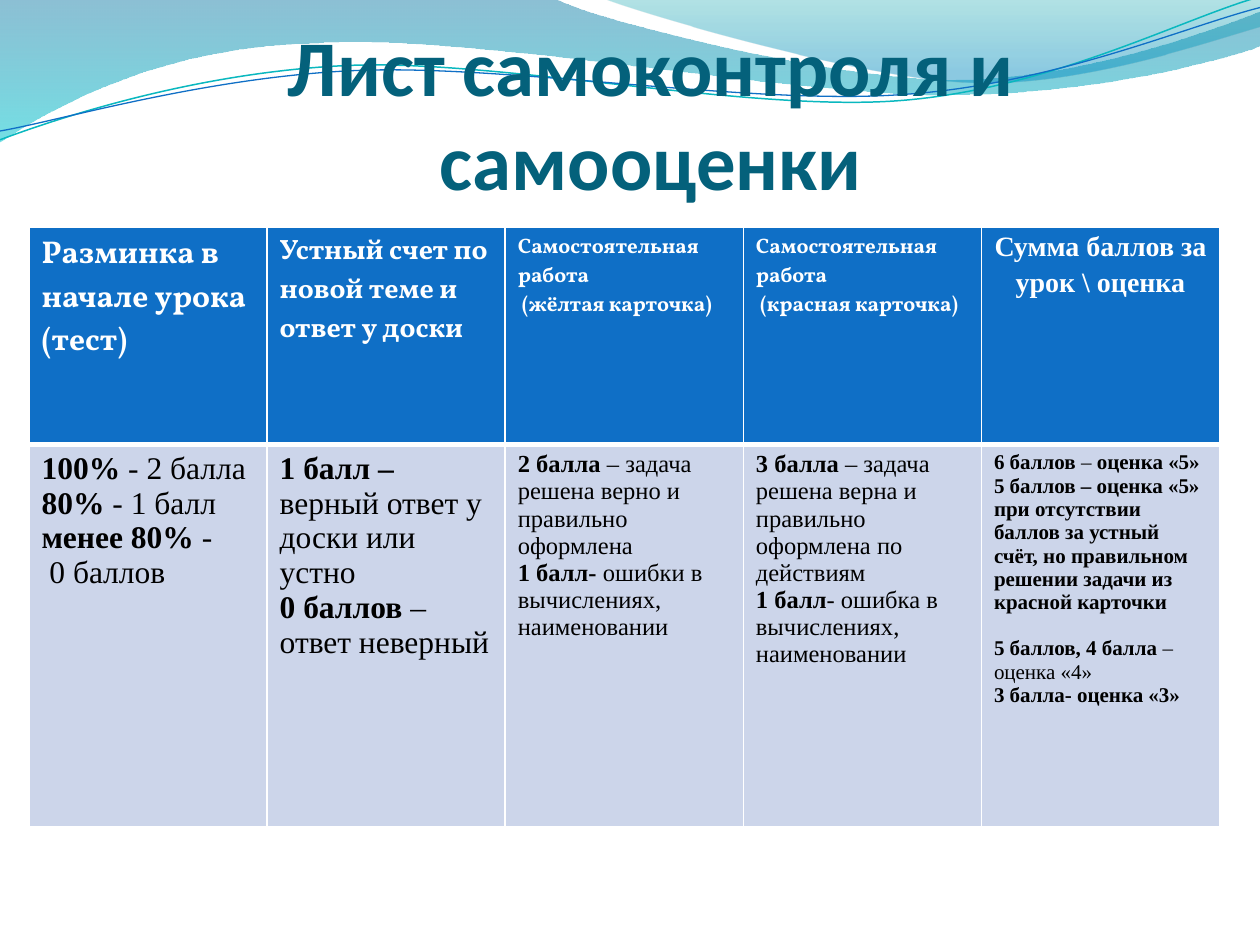
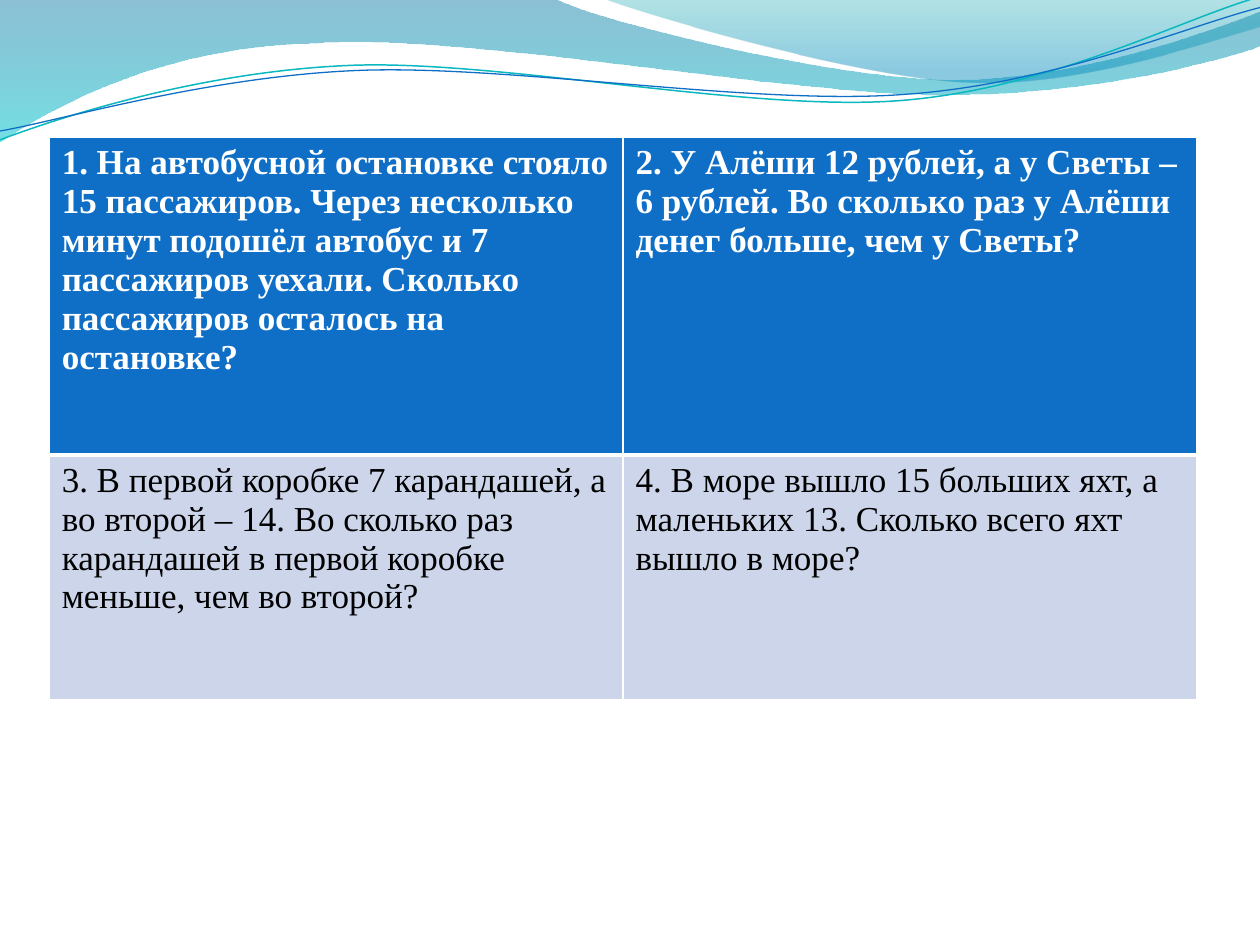
"""Build two maths-lesson slides: a self-assessment sheet and a set of problems."""
from lxml.etree import SubElement
from pptx import Presentation
from pptx.dml.color import RGBColor
from pptx.enum.text import MSO_ANCHOR, MSO_AUTO_SIZE, PP_ALIGN
from pptx.oxml.ns import qn
from pptx.util import Pt

EMU_PER_PX = 9144
TITLE_ONLY, BLANK = 5, 6
COLORS = {
    "white": "FFFFFF", "black": "000000", "title": "04617B",
    "header": "0F6FC6", "body": "CCD5EA", "line_teal": "0AB8BF",
    "left_top": "0074A1", "left_bottom": "00C6CF",
    "right_top": "00A1A9", "right_bottom": "008BBF",
}
SERIF, TITLE_FONT, HEADER_FONT = "Times New Roman", "Calibri", "Vollkorn"

LEFT_WAVE = [(0, 0), (440, -1), (476, 17, 664, 63, 758, 63),
             (853, 63, 958, 26, 1000, 9), (1001, 36),
             (983, 44, 870, 76, 746, 75), (622, 75, 382, 28, 257, 34),
             (129, 36, 46, 83, -1, 113), (0, 0)]
RIGHT_WAVE = [(479, -1), (509, 11, 682, 62, 769, 65),
              (856, 69, 961, 32, 1000, 21), (1000, 0), (479, -1)]
TEAL_LINE = [(0, 111), (48, 93, 158, 57, 277, 52),
             (395, 47, 593, 89, 713, 80), (833, 71, 938, 15, 998, -2)]
BLUE_LINE = [(0, 104), (47, 96, 164, 61, 283, 56),
             (403, 51, 597, 84, 717, 75), (836, 67, 941, 21, 1000, 6)]

ASSESSMENT_HEADER = [
    (["Разминка в начале урока (тест)"], 18),
    (["Устный счет по новой теме и ответ у доски"], 16),
    (["Самостоятельная работа", " (жёлтая карточка)"], 12),
    (["Самостоятельная работа", " (красная карточка)"], 12),
    (["Сумма баллов за урок \\ оценка"], 16),
]
ASSESSMENT_BODY = [
    (["**100% **- 2 балла", "**80% **- 1 балл", "**менее 80% **-", " 0 баллов"], 18),
    (["**1 балл – **верный ответ у доски или устно",
      "**0 баллов **– ответ неверный"], 18),
    (["**2 балла **– задача решена верно и правильно оформлена",
      "**1 балл- **ошибки в вычислениях, наименовании"], 14),
    (["**3 балла **– задача решена верна и правильно оформлена по действиям",
      "**1 балл**- ошибка в вычислениях, наименовании"], 14),
    (["**6 баллов **– **оценка «5»**",
      "**5 баллов – оценка «5» при отсутствии баллов за устный счёт, "
      "но правильном решении задачи из красной карточки**",
      "**5 баллов, 4 балла **– оценка «4»", "**3 балла- оценка «3»**"], 12),
]
PROBLEMS = [
    [(["1. На автобусной остановке стояло 15 пассажиров. Через несколько минут "
       "подошёл автобус и 7 пассажиров уехали. Сколько пассажиров осталось на "
       "остановке?"], 20),
     (["2. У Алёши 12 рублей, а у Светы – 6 рублей. Во сколько раз у Алёши "
       "денег больше, чем у Светы?"], 20)],
    [(["3. В первой коробке 7 карандашей, а во второй – 14. Во сколько раз "
       "карандашей в первой коробке меньше, чем во второй?"], 20),
     (["4. В море вышло 15 больших яхт, а маленьких 13. Сколько всего яхт "
       "вышло в море?"], 20)],
]


def px(length):
    """Turn px into EMU."""
    return round(length * EMU_PER_PX)


def color(name):
    """Return a named colour."""
    return RGBColor.from_string(COLORS[name])


class LessonDeck:
    """Hold the shared style and the current slide."""

    def __init__(self):
        """Start an empty deck."""
        self.deck = Presentation()
        self.deck.slide_width, self.deck.slide_height = px(1000), px(750)
        self.page = None

    def add_page(self, layout):
        """Add a slide."""
        self.page = self.deck.slides.add_slide(self.deck.slide_layouts[layout])

    def decorate_master(self):
        """Draw the waves and move them behind everything on the master."""
        waves = [
            self.wave(LEFT_WAVE, [(0, "left_top", 45), (1, "left_bottom", 55)]),
            self.wave(RIGHT_WAVE, [(0, "right_top", 30), (0.8, "right_bottom", 45)]),
            self.wave_line(TEAL_LINE, "line_teal", 0.85),
            self.wave_line(BLUE_LINE, "header", 0.75),
        ]
        tree = self.deck.slide_master.shapes._spTree
        for number, shape in enumerate(waves):
            shape._element.nvSpPr.cNvPr.set("id", str(100 + number))
            tree.insert(2 + number, shape._element)

    def outline(self, outline, close):
        """Draw a freeform of lines and cubic curves."""
        points = [(px(x), px(y)) for segment in outline
                  for x, y in zip(segment[::2], segment[1::2])]
        builder = self.page.shapes.build_freeform(*points[0])
        builder.add_line_segments(points[1:], close=close)
        shape = builder.convert_to_shape()
        shape.shadow.inherit = False
        lines = list(shape._element.iter(qn("a:lnTo")))
        for segment in outline[1:]:
            group = [lines.pop(0) for _ in segment[::2]]
            if len(group) == 3:
                group[0].tag = qn("a:cubicBezTo")
                for line in group[1:]:
                    group[0].append(line[0])
                    line.getparent().remove(line)
        return shape

    def wave(self, outline, stops):
        """Draw a wave with a vertical transparent gradient."""
        shape = self.outline(outline, True)
        shape.line.fill.background()
        shape.fill.gradient()
        shape.fill.gradient_angle = 270
        for stop, (position, name, _) in zip(shape.fill.gradient_stops, stops):
            stop.position = position
            stop.color.rgb = color(name)
        tones = shape._element.spPr.iter(qn("a:srgbClr"))
        for tone, (_, _, opacity) in zip(tones, stops):
            SubElement(tone, qn("a:alpha"), val=str(opacity * 1000))
        return shape

    def wave_line(self, outline, name, width):
        """Draw a thin wavy line."""
        shape = self.outline(outline, False)
        shape.fill.background()
        shape.line.color.rgb = color(name)
        shape.line.width = Pt(width)
        return shape

    def style_span(self, span, size, font, name, bold):
        """Format one run."""
        span.font.size, span.font.name, span.font.bold = Pt(size), font, bold
        span.font.color.rgb = color(name)

    def title(self, text, left, top, width, height):
        """Place and format the slide title."""
        box = self.page.shapes.title
        box.left, box.top, box.width, box.height = map(px, (left, top, width, height))
        frame = box.text_frame
        frame.text = text
        frame.word_wrap = True
        frame.auto_size = MSO_AUTO_SIZE.NONE
        frame.vertical_anchor = MSO_ANCHOR.BOTTOM
        frame.margin_left = frame.margin_right = frame.margin_bottom = 0
        frame.margin_top = px(5)
        para = frame.paragraphs[0]
        para.alignment = PP_ALIGN.CENTER
        self.style_span(para.runs[0], 45, TITLE_FONT, "title", True)

    def borders(self, cell, **widths):
        """Give a cell white borders."""
        properties = cell._tc.get_or_add_tcPr()
        for side in "LRTB":
            line = SubElement(properties, qn(f"a:ln{side}"),
                              w=str(Pt(widths.get(side, 1))))
            fill = SubElement(line, qn("a:solidFill"))
            SubElement(fill, qn("a:srgbClr"), val=COLORS["white"])

    def cell_text(self, cell, lines, size, font, name, header):
        """Write paragraphs, with bold spans between double asterisks."""
        frame = cell.text_frame
        for index, line in enumerate(lines):
            para = frame.paragraphs[0] if index == 0 else frame.add_paragraph()
            for number, piece in enumerate(line.split("**")):
                if piece:
                    span = para.add_run()
                    span.text = piece
                    self.style_span(span, size, font, name, header or number % 2 == 1)

    def table(self, left, top, width, row_heights, rows, header_font=SERIF):
        """Add a table with a blue header row and a pale body."""
        columns = len(rows[0])
        table = self.page.shapes.add_table(
            len(rows), columns, px(left), px(top),
            px(width), px(sum(row_heights))).table
        table.first_row = table.horz_banding = False
        for column in table.columns:
            column.width = px(width / columns)
        for index, (height, row) in enumerate(zip(row_heights, rows)):
            table.rows[index].height = px(height)
            header = index == 0
            for number, (lines, size) in enumerate(row):
                cell = table.cell(index, number)
                self.borders(cell, **({"B": 3} if header else {"T": 3}))
                cell.fill.solid()
                cell.fill.fore_color.rgb = color("header" if header else "body")
                self.cell_text(cell, lines, size, header_font if header else SERIF,
                               "white" if header else "black", header)
        return table


def main():
    """Build and save the deck."""
    lesson = LessonDeck()

    lesson.add_page(TITLE_ONLY)
    lesson.decorate_master()
    lesson.title("Лист самоконтроля и самооценки", 78, 94, 877, 70)
    table = lesson.table(23, 180, 945, [173, 303],
                         [ASSESSMENT_HEADER, ASSESSMENT_BODY], HEADER_FONT)
    total = table.cell(0, 4)
    total.margin_left = total.margin_right = px(7)
    total.margin_top = total.margin_bottom = 0
    para = total.text_frame.paragraphs[0]
    para.alignment = PP_ALIGN.CENTER
    para.line_spacing = 1.15
    para.runs[0].font.name = SERIF
    table.cell(1, 4).text_frame.paragraphs[2].space_before = Pt(13)

    lesson.add_page(BLANK)
    lesson.table(39, 109, 911, [252, 194], PROBLEMS)

    lesson.deck.save("out.pptx")


if __name__ == "__main__":
    main()
